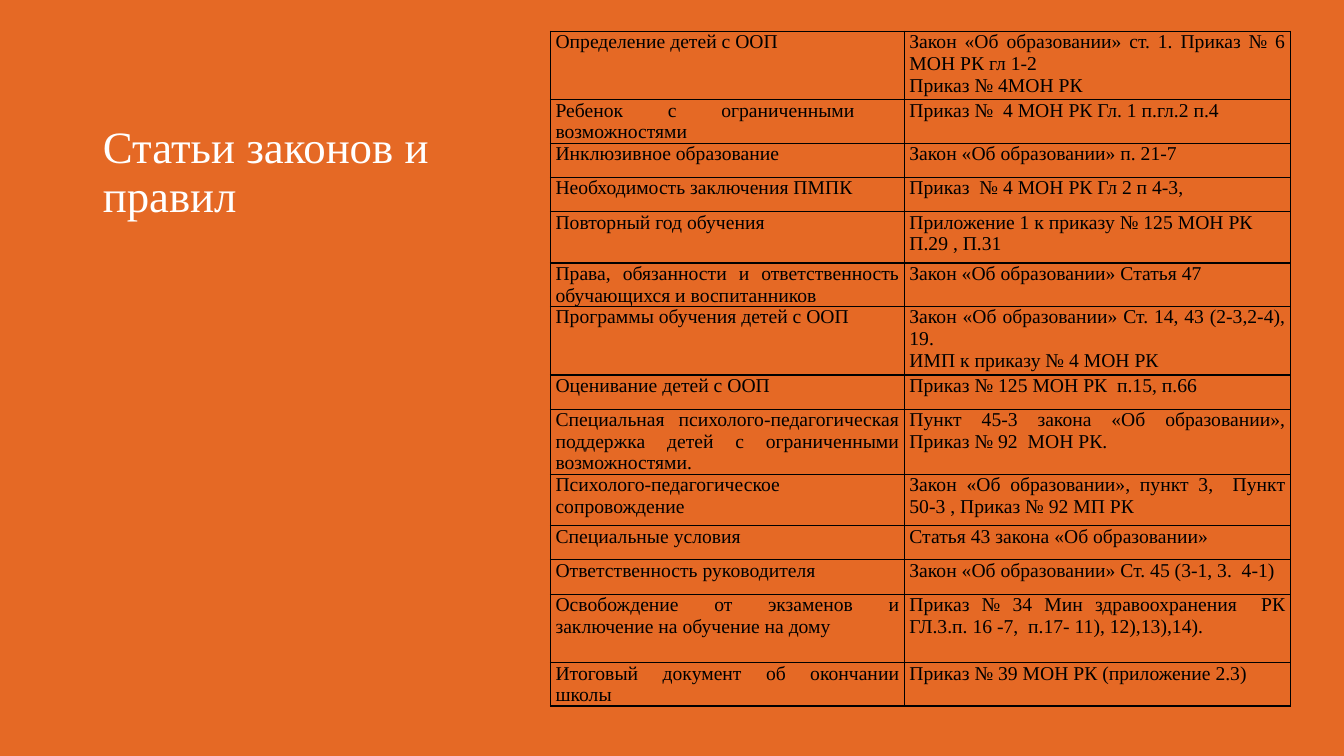
from lxml.etree import SubElement
from pptx import Presentation
from pptx.dml.color import RGBColor
from pptx.enum.text import MSO_ANCHOR, MSO_AUTO_SIZE, PP_ALIGN
from pptx.oxml.ns import qn
from pptx.util import Inches, Pt

ORANGE = RGBColor(0xE5, 0x69, 0x25)
WHITE = RGBColor(0xFF, 0xFF, 0xFF)
BLACK = RGBColor(0x00, 0x00, 0x00)
FONT = "Times New Roman"
ROW_UNIT = 0.17
COLUMN_WIDTHS = (3.51, 3.83)

# Height in row units, topic, articles (one paragraph per line)
LAW_ROWS = [
    (4, "Определение детей с ООП",
     "Закон «Об образовании» ст. 1. Приказ № 6 МОН РК гл 1-2\nПриказ № 4МОН РК"),
    (2, "Ребенок с ограниченными  возможностями", "Приказ №  4 МОН РК Гл. 1 п.гл.2 п.4"),
    (2, "Инклюзивное образование", "Закон «Об образовании» п. 21-7"),
    (2, "Необходимость заключения ПМПК", "Приказ  № 4 МОН РК Гл 2 п 4-3,"),
    (3, "Повторный год обучения", "Приложение 1 к приказу № 125 МОН РК\nП.29 , П.31"),
    (2, "Права, обязанности и ответственность обучающихся и воспитанников",
     "Закон «Об образовании» Статья 47"),
    (4, "Программы обучения детей с ООП",
     "Закон «Об образовании» Ст. 14, 43 (2-3,2-4), 19.\nИМП к приказу № 4 МОН РК"),
    (2, "Оценивание детей с ООП", "Приказ № 125 МОН РК  п.15, п.66"),
    (3, "Специальная психолого-педагогическая поддержка детей с ограниченными возможностями.",
     "Пункт 45-3 закона «Об образовании», Приказ № 92  МОН РК."),
    (3, "Психолого-педагогическое сопровождение",
     "Закон «Об образовании», пункт 3,  Пункт 50-3 , Приказ № 92 МП РК"),
    (2, "Специальные условия", "Статья 43 закона «Об образовании»"),
    (2, "Ответственность руководителя", "Закон «Об образовании» Ст. 45 (3-1, 3.  4-1)"),
    (4, "Освобождение от экзаменов и заключение на обучение на дому",
     "Приказ № 34 Мин здравоохранения  РК ГЛ.3.п. 16 -7,  п.17- 11), 12),13),14)."),
    (2, "Итоговый документ об окончании школы", "Приказ № 39 МОН РК (приложение 2.3)"),
]


def write_text(text_frame, text, size, color, align, line_spacing=None):
    text_frame.text = text
    for paragraph in text_frame.paragraphs:
        paragraph.alignment = align
        paragraph.line_spacing = line_spacing
        for run in paragraph.runs:
            run.font.name = FONT
            run.font.size = Pt(size)
            run.font.color.rgb = color


def add_cell_borders(cell, color, width):
    properties = cell._tc.get_or_add_tcPr()
    for side in ("a:lnL", "a:lnR", "a:lnT", "a:lnB"):
        line = SubElement(properties, qn(side), w=str(Pt(width)))
        fill = SubElement(line, qn("a:solidFill"))
        SubElement(fill, qn("a:srgbClr"), val=str(color))


def place_title(slide, left, top, width, height):
    title = slide.shapes.title
    title.left, title.top = Inches(left), Inches(top)
    title.width, title.height = Inches(width), Inches(height)
    frame = title.text_frame
    frame.word_wrap = True
    frame.auto_size = MSO_AUTO_SIZE.NONE
    frame.vertical_anchor = MSO_ANCHOR.BOTTOM
    write_text(frame, "Статьи законов и правил", 32, WHITE, PP_ALIGN.LEFT, line_spacing=0.9)


def add_law_table(slide, left, top, width, height):
    table = slide.shapes.add_table(
        len(LAW_ROWS), len(COLUMN_WIDTHS),
        Inches(left), Inches(top), Inches(width), Inches(height)).table
    table.first_row = False
    table.horz_banding = False
    for column, column_width in zip(table.columns, COLUMN_WIDTHS):
        column.width = Inches(column_width)
    for row, (units, *texts) in zip(table.rows, LAW_ROWS):
        row.height = Inches(units * ROW_UNIT)
        for cell, text in zip(row.cells, texts):
            cell.margin_left = cell.margin_right = Inches(0.05)
            cell.margin_top = cell.margin_bottom = 0
            add_cell_borders(cell, BLACK, 1)
            cell.fill.background()
            write_text(cell.text_frame, text, 14, BLACK, PP_ALIGN.JUSTIFY)


def main():
    presentation = Presentation()
    presentation.slide_width = Inches(13.33)
    presentation.slide_height = Inches(7.5)
    slide = presentation.slides.add_slide(presentation.slide_layouts.get_by_name("Title Only"))
    slide.background.fill.solid()
    slide.background.fill.fore_color.rgb = ORANGE
    place_title(slide, 0.92, 0.5, 4.3, 1.75)
    add_law_table(slide, 5.46, 0.31, sum(COLUMN_WIDTHS), 6.88)
    presentation.save("out.pptx")


if __name__ == "__main__":
    main()
